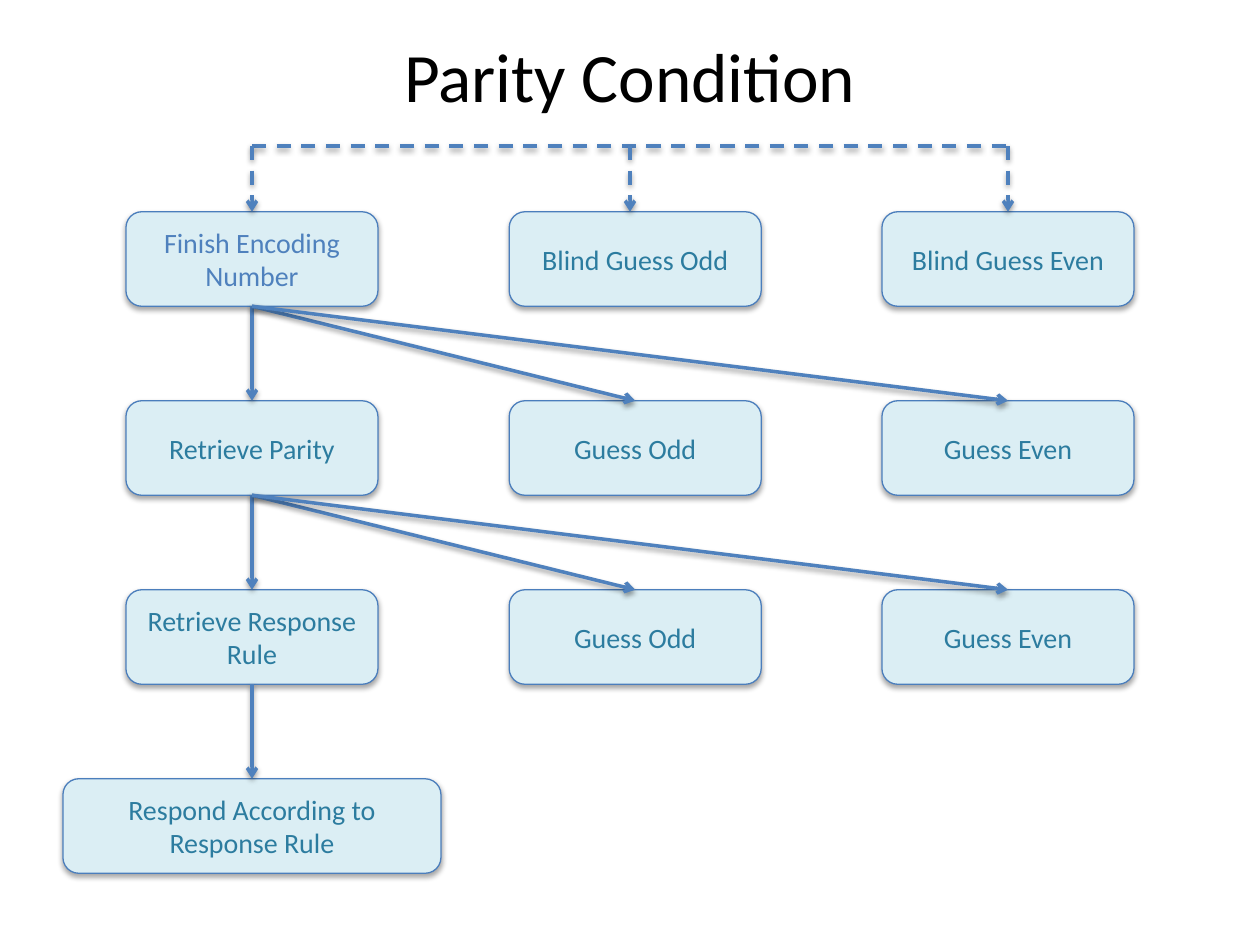
from pptx import Presentation
from pptx.dml.color import RGBColor
from pptx.enum.dml import MSO_LINE_DASH_STYLE as Dash
from pptx.enum.shapes import MSO_CONNECTOR as Connector, MSO_SHAPE as Shape
from pptx.enum.text import MSO_ANCHOR as Anchor, PP_ALIGN as Align
from pptx.oxml import parse_xml
from pptx.oxml.ns import nsdecls
from pptx.util import Pt

BLACK = RGBColor(0x00, 0x00, 0x00)
PALE_BLUE = RGBColor(0xDB, 0xEE, 0xF4)
OUTLINE_BLUE = RGBColor(0x4B, 0x7E, 0xBC)
ARROW_BLUE = RGBColor(0x4F, 0x81, 0xBD)
TEAL = RGBColor(0x2C, 0x7C, 0x9F)

TOP, BOTTOM = 0, 2
COLUMN_LEFTS = (72, 291, 504)
STEP_WIDTH, STEP_HEIGHT, ROW_PITCH = 144, 54, 108
STEPS = (
    ("Finish Encoding Number", "Blind Guess Odd", "Blind Guess Even"),
    ("Retrieve Parity", "Guess Odd", "Guess Even"),
    ("Retrieve Response Rule", "Guess Odd", "Guess Even"),
)


def set_attributes(target, values):
    for name, value in values.items():
        setattr(target, name, value)


def write_text(shape, text, size, color, anchor):
    set_attributes(shape.text_frame, {"word_wrap": True, "vertical_anchor": anchor})
    paragraph = shape.text_frame.paragraphs[0]
    paragraph.alignment = Align.CENTER
    run = paragraph.add_run()
    run.text = text
    set_attributes(run.font, {"name": "Calibri", "size": Pt(size)})
    run.font.color.rgb = color


def add_shadow(shape, distance, opacity):
    shape._element.spPr.append(parse_xml(
        f'<a:effectLst {nsdecls("a")}>'
        f'<a:outerShdw blurRad="{Pt(3.1)}" dist="{Pt(distance)}" dir="5400000" rotWithShape="0">'
        f'<a:srgbClr val="000000"><a:alpha val="{opacity * 1000}"/></a:srgbClr>'
        '</a:outerShdw></a:effectLst>'))


def add_title(slide, left, top, width, height):
    title = slide.shapes.add_textbox(Pt(left), Pt(top), Pt(width), Pt(height))
    set_attributes(title.text_frame, {"margin_top": 0, "margin_bottom": 0})
    write_text(title, "Parity Condition", 39.6, BLACK, Anchor.TOP)


def add_step(slide, text, left, top, width, height, color=TEAL):
    step = slide.shapes.add_shape(
        Shape.ROUNDED_RECTANGLE, Pt(left), Pt(top), Pt(width), Pt(height))
    step.fill.solid()
    step.fill.fore_color.rgb = PALE_BLUE
    step.line.color.rgb = OUTLINE_BLUE
    step.line.width = Pt(0.75)
    add_shadow(step, 1.8, 35)
    write_text(step, text, 16, color, Anchor.MIDDLE)
    return step


def add_line(slide, start=(0, 0), end=(0, 0), source=None, target=None,
             dashed=False, arrow=True):
    line = slide.shapes.add_connector(
        Connector.STRAIGHT, *(Pt(value) for value in (*start, *end)))
    if source is not None:
        line.begin_connect(source, BOTTOM)
    if target is not None:
        line.end_connect(target, TOP)
    line.line.color.rgb = ARROW_BLUE
    line.line.width = Pt(2)
    if dashed:
        line.line.dash_style = Dash.DASH
    if arrow:
        line.line._get_or_add_ln().append(
            parse_xml(f'<a:tailEnd {nsdecls("a")} type="arrow"/>'))
    add_shadow(line, 1.6, 38)


def add_flow(slide, top):
    rows = []
    for row, texts in enumerate(STEPS):
        rows.append([
            add_step(slide, text, left, top + row * ROW_PITCH, STEP_WIDTH, STEP_HEIGHT,
                     ARROW_BLUE if row == column == 0 else TEAL)
            for column, (text, left) in enumerate(zip(texts, COLUMN_LEFTS))])
    response = add_step(slide, "Respond According to Response Rule",
                        36, top + len(STEPS) * ROW_PITCH, 216, STEP_HEIGHT)
    for steps, next_steps in zip(rows, rows[1:] + [[response]]):
        for target in next_steps:
            add_line(slide, source=steps[0], target=target)
    return rows[0]


def add_entry(slide, left, top, width, height, first_steps):
    add_line(slide, (left, top), (left + width, top), dashed=True, arrow=False)
    first, middle, last = (left + width * part / 2 for part in range(3))
    for x, target in ((first, first_steps[0]), (middle, None), (last, first_steps[2])):
        add_line(slide, (x, top), (x, top + height), target=target, dashed=True)


def main():
    presentation = Presentation()
    set_attributes(presentation, {"slide_width": Pt(720), "slide_height": Pt(540)})
    slide = presentation.slides.add_slide(presentation.slide_layouts[6])
    add_title(slide, 36, 19, 648, 90)
    first_steps = add_flow(slide, 121)
    add_entry(slide, 144, 83.5, 432, 37.5, first_steps)
    presentation.save("out.pptx")


if __name__ == "__main__":
    main()
